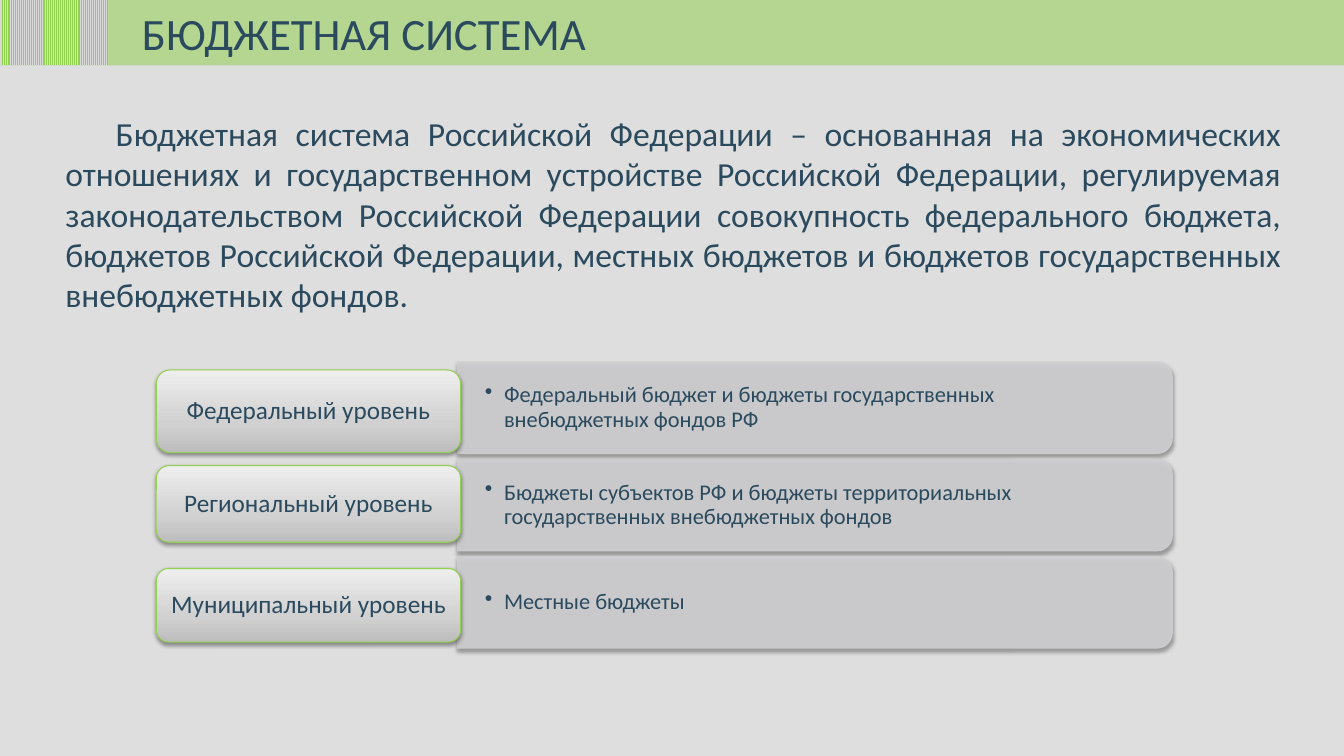
from collections import namedtuple

from lxml import etree
from pptx import Presentation
from pptx.dml.color import RGBColor
from pptx.enum.dml import MSO_PATTERN
from pptx.enum.shapes import MSO_SHAPE
from pptx.enum.text import MSO_ANCHOR, PP_ALIGN
from pptx.oxml.ns import qn
from pptx.util import Inches, Pt

RECT = MSO_SHAPE.RECTANGLE
LABEL = MSO_SHAPE.ROUNDED_RECTANGLE
PANEL = MSO_SHAPE.ROUND_2_SAME_RECTANGLE
STRIPES = MSO_PATTERN.LIGHT_VERTICAL
TOP, MIDDLE = MSO_ANCHOR.TOP, MSO_ANCHOR.MIDDLE
LEFT, CENTER, JUSTIFY = PP_ALIGN.LEFT, PP_ALIGN.CENTER, PP_ALIGN.JUSTIFY

PALE = RGBColor(0xDE, 0xDE, 0xDE)
STRIPE_GREY = RGBColor(0xD9, 0xD9, 0xD9)
PANEL_GREY = RGBColor(0xCF, 0xCF, 0xD1)
GREEN = RGBColor(0x92, 0xD0, 0x50)
INK = RGBColor(0x2B, 0x4A, 0x5E)
BLACK = RGBColor(0, 0, 0)
LABEL_STOPS = [
    (0, RGBColor(0xBD, 0xBD, 0xBD)),
    (35, RGBColor(0xD1, 0xD1, 0xD1)),
    (100, RGBColor(0xEE, 0xEE, 0xEE)),
]
FONT = "Calibri"

CELL = Inches(0.1)
COLUMNS, ROWS = 133.33, 75
Box = namedtuple("Box", "x y w h")
Level = namedtuple("Level", "name budgets label_top label_height")

TITLE = "БЮДЖЕТНАЯ СИСТЕМА"
DEFINITION = (
    "Бюджетная система Российской Федерации – основанная на экономических "
    "отношениях и государственном устройстве Российской Федерации, регулируемая "
    "законодательством Российской Федерации совокупность федерального бюджета, "
    "бюджетов Российской Федерации, местных бюджетов и бюджетов государственных "
    "внебюджетных фондов."
)
LEVELS = [
    Level("Федеральный уровень",
          "Федеральный бюджет и бюджеты государственных внебюджетных фондов РФ",
          0.8, 8.2),
    Level("Региональный уровень",
          "Бюджеты субъектов РФ и бюджеты территориальных "
          "государственных внебюджетных фондов",
          0.65, 7.6),
    Level("Муниципальный уровень", "Местные бюджеты", 1.2, 7.3),
]


def cells(box):
    return [round(length * CELL) for length in box]


def add_color(parent, color, opacity=None):
    node = etree.SubElement(parent, qn("a:srgbClr"), val=str(color))
    if opacity is not None:
        etree.SubElement(node, qn("a:alpha"), val=str(opacity * 1000))


def set_opacity(fill_parent, opacity):
    color = fill_parent.find(qn("a:solidFill")).find(qn("a:srgbClr"))
    etree.SubElement(color, qn("a:alpha"), val=str(opacity * 1000))


def add_shadow(shape, opacity, distance):
    effects = shape.element.spPr.find(qn("a:effectLst"))
    shadow = etree.SubElement(
        effects, qn("a:outerShdw"), blurRad=str(Pt(3.1)), dist=str(Pt(distance)),
        dir="5400000", rotWithShape="0")
    add_color(shadow, BLACK, opacity)


def add_block(slide, kind, box):
    block = slide.shapes.add_shape(kind, *cells(box))
    block.shadow.inherit = False
    block.line.fill.background()
    return block


def write(shape, text, size, align=LEFT, anchor=TOP, insets=(1, 0.5), wrap=True):
    frame = shape.text_frame
    frame.word_wrap = wrap
    frame.vertical_anchor = anchor
    across, down = (round(inset * CELL) for inset in insets)
    frame.margin_left = frame.margin_right = across
    frame.margin_top = frame.margin_bottom = down
    paragraph = frame.paragraphs[0]
    paragraph.text = text
    paragraph.alignment = align
    font = paragraph.runs[0].font
    font.name, font.size, font.color.rgb = FONT, Pt(size), INK
    return paragraph


def header(slide, box):
    band = add_block(slide, RECT, box)
    band.fill.solid()
    band.fill.fore_color.rgb = GREEN
    set_opacity(band.element.spPr, 54)
    title = slide.shapes.add_textbox(*cells(Box(box.x + 13.1, box.y + 0.1, 46.5, box.h - 0.1)))
    write(title, TITLE, 32, wrap=False)
    stripes = add_block(slide, RECT, box._replace(w=10.7))
    stripes.fill.patterned()
    stripes.fill.pattern = STRIPES
    stripes.fill.fore_color.rgb = GREEN
    stripes.fill.back_color.rgb = STRIPE_GREY


def definition(slide, box):
    body = slide.shapes.add_textbox(*cells(box))
    paragraph = write(body, DEFINITION, 24, JUSTIFY)
    paragraph._p.get_or_add_pPr().set("indent", str(Inches(0.5)))


def budgets_panel(slide, box, budgets):
    upright = Box(box.x + (box.w - box.h) / 2, box.y + (box.h - box.w) / 2, box.h, box.w)
    panel = add_block(slide, PANEL, upright)
    panel.rotation = 90
    panel.fill.solid()
    panel.fill.fore_color.rgb = PANEL_GREY
    set_opacity(panel.element.spPr, 90)
    panel.line.color.rgb = PANEL_GREY
    panel.line.width = Pt(0.75)
    set_opacity(panel.element.spPr.find(qn("a:ln")), 90)
    add_shadow(panel, 35, 1.8)
    content = slide.shapes.add_textbox(*cells(Box(box.x, box.y + 0.45, box.w - 0.4, box.h - 0.9)))
    paragraph = write(content, budgets, 16, anchor=MIDDLE, insets=(2.7, 1.4))
    paragraph.line_spacing = 0.9
    properties = paragraph._p.get_or_add_pPr()
    properties.set("marL", str(Inches(0.19)))
    properties.set("indent", str(-Inches(0.19)))
    etree.SubElement(properties, qn("a:buChar"), char="•")


def level_label(slide, box, name):
    label = add_block(slide, LABEL, box)
    label.line.color.rgb = GREEN
    label.line.width = Pt(0.75)
    gradient = etree.Element(qn("a:gradFill"), rotWithShape="1")
    stops = etree.SubElement(gradient, qn("a:gsLst"))
    for position, color in LABEL_STOPS:
        add_color(etree.SubElement(stops, qn("a:gs"), pos=str(position * 1000)), color)
    etree.SubElement(gradient, qn("a:lin"), ang="16200000", scaled="0")
    label.element.spPr.find(qn("a:prstGeom")).addnext(gradient)
    add_shadow(label, 38, 1.6)
    write(label, name, 18, CENTER, MIDDLE, (0.7, 0.4)).line_spacing = 0.9


def budget_levels(slide, box):
    label_width, overlap, gap = 30.2, 0.3, 0.55
    height = (box.h - gap * (len(LEVELS) - 1)) / len(LEVELS)
    panel_left = label_width - overlap
    for index, level in enumerate(LEVELS):
        top = box.y + index * (height + gap)
        budgets_panel(slide, Box(box.x + panel_left, top, box.w - panel_left, height), level.budgets)
        level_label(slide, Box(box.x, top + level.label_top, label_width, level.label_height), level.name)


def main():
    presentation = Presentation()
    presentation.slide_width = round(COLUMNS * CELL)
    presentation.slide_height = ROWS * CELL
    slide = presentation.slides.add_slide(presentation.slide_layouts[6])
    slide.background.fill.solid()
    slide.background.fill.fore_color.rgb = PALE
    header(slide, Box(0, 0, COLUMNS, 6.5))
    definition(slide, Box(5.5, 10.7, 122.6, 21.2))
    budget_levels(slide, Box(15.5, 35.9, 100.8, 28.4))
    presentation.save("out.pptx")


if __name__ == "__main__":
    main()
